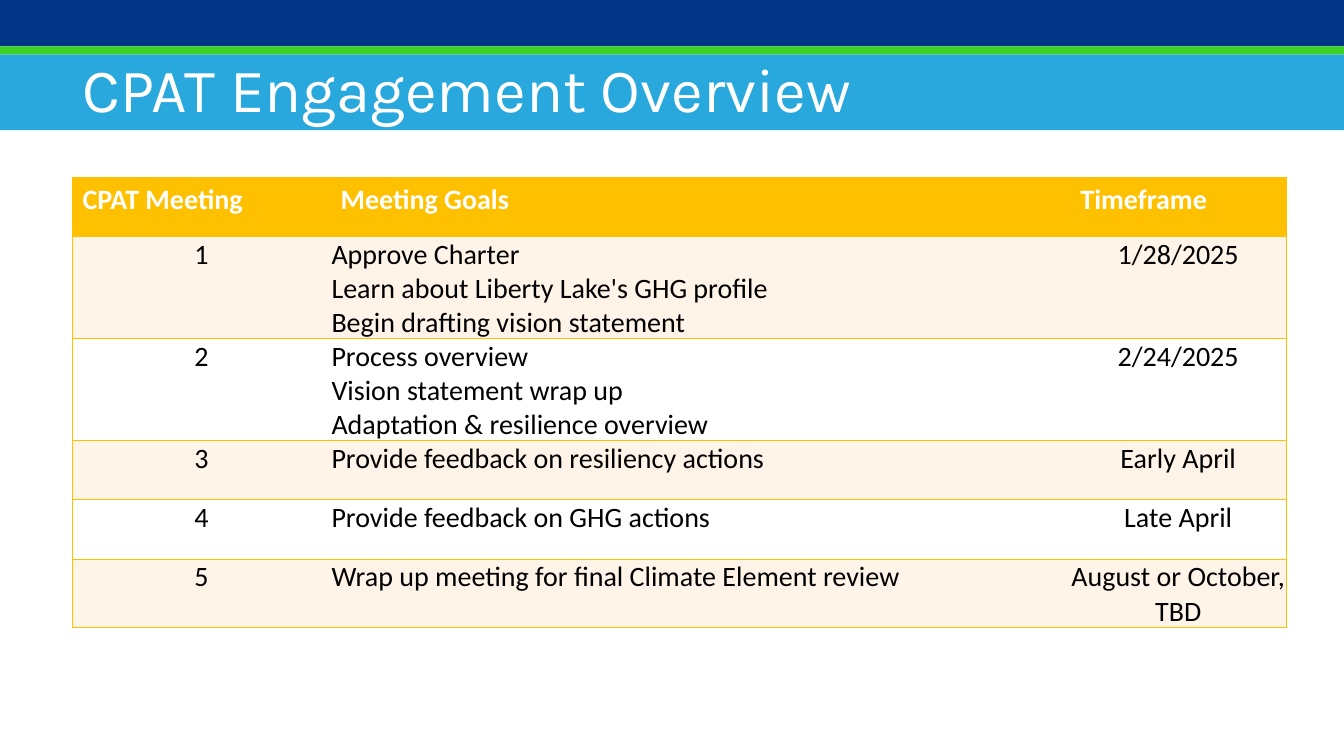
from lxml.etree import SubElement
from pptx import Presentation
from pptx.dml.color import RGBColor
from pptx.enum.shapes import MSO_SHAPE
from pptx.enum.text import PP_ALIGN
from pptx.oxml.ns import qn
from pptx.util import Pt

GOLD = "FFC000"
WHITE = "FFFFFF"
CREAM = "FFF4E7"
COLUMN_WIDTHS = [184.3, 528.5, 154.1]
ROW_HEIGHTS = [42, 58.3, 42.5, 42.5, 42.5, 42.5]
MEETINGS = [
    ("CPAT Meeting", "Meeting Goals", "Timeframe"),
    ("1", "Approve Charter\nLearn about Liberty Lake's GHG profile\nBegin drafting vision statement", "1/28/2025"),
    ("2", "Process overview\nVision statement wrap up\nAdaptation & resilience overview", "2/24/2025"),
    ("3", "Provide feedback on resiliency actions", "Early April"),
    ("4", "Provide feedback on GHG actions", "Late April"),
    ("5", "Wrap up meeting for final Climate Element review", "August or October, TBD"),
]


def color(value):
    return RGBColor.from_string(value)


def format_text(text_frame, font_name, size, font_color, bold=False, alignment=PP_ALIGN.LEFT):
    for paragraph in text_frame.paragraphs:
        paragraph.alignment = alignment
        for run in paragraph.runs:
            run.font.name = font_name
            run.font.size = Pt(size)
            run.font.bold = bold
            run.font.color.rgb = color(font_color)


def add_band(slide, top, height, fill):
    shape = slide.shapes.add_shape(MSO_SHAPE.RECTANGLE, 0, Pt(top), Pt(960), Pt(height))
    shape.shadow.inherit = False
    shape.fill.solid()
    shape.fill.fore_color.rgb = color(fill)
    shape.line.fill.background()


def add_title(slide, text):
    shape = slide.shapes.add_textbox(Pt(51.8), Pt(33.1), Pt(866.9), Pt(60.5))
    shape.text_frame.word_wrap = True
    shape.text_frame.text = text
    format_text(shape.text_frame, "Karla", 44, WHITE)


def set_border(cell, side, visible):
    line = SubElement(cell._tc.get_or_add_tcPr(), qn(f"a:ln{side}"), w=str(Pt(1)))
    if visible:
        fill = SubElement(line, qn("a:solidFill"))
        SubElement(fill, qn("a:srgbClr"), val=GOLD)
    else:
        SubElement(line, qn("a:noFill"))


def format_cell(cell, row, column):
    visible = {"L": column == 0, "R": column == len(COLUMN_WIDTHS) - 1, "T": True, "B": True}
    for side, shown in visible.items():
        set_border(cell, side, shown)
    header = row == 0
    cell.fill.solid()
    cell.fill.fore_color.rgb = color(GOLD if header else CREAM if row % 2 else WHITE)
    if not header:
        cell.margin_left = cell.margin_right = cell.margin_top = Pt(0.75)
        cell.margin_bottom = 0
    centered = not header and column != 1
    format_text(cell.text_frame, "Calibri", 20, WHITE if header else "000000", header,
                PP_ALIGN.CENTER if centered else PP_ALIGN.LEFT)


def add_meeting_table(slide):
    table = slide.shapes.add_table(len(MEETINGS), len(COLUMN_WIDTHS), Pt(51.8), Pt(126.9),
                                   Pt(sum(COLUMN_WIDTHS)), Pt(sum(ROW_HEIGHTS))).table
    for column, width in zip(table.columns, COLUMN_WIDTHS):
        column.width = Pt(width)
    for row, height in zip(table.rows, ROW_HEIGHTS):
        row.height = Pt(height)
    for row, meeting in enumerate(MEETINGS):
        for column, text in enumerate(meeting):
            cell = table.cell(row, column)
            cell.text_frame.text = text
            format_cell(cell, row, column)


def main():
    presentation = Presentation()
    presentation.slide_width = Pt(960)
    presentation.slide_height = Pt(540)
    slide = presentation.slides.add_slide(presentation.slide_layouts[6])
    add_band(slide, 38.9, 54, "28A8DD")
    add_band(slide, 0, 33.1, "023586")
    add_band(slide, 33.1, 5.8, "3ED128")
    add_title(slide, "CPAT Engagement Overview")
    add_meeting_table(slide)
    presentation.save("out.pptx")


if __name__ == "__main__":
    main()
